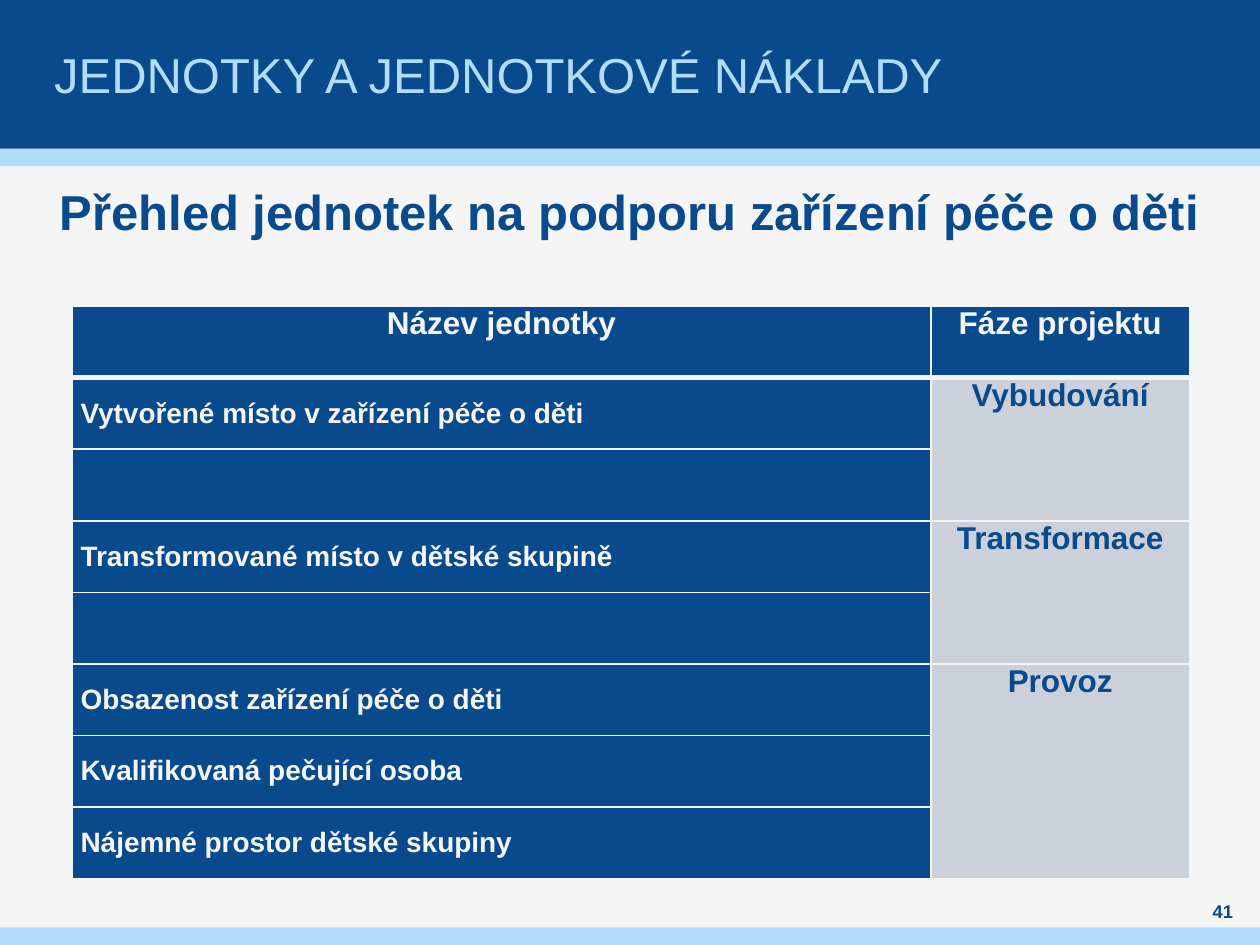
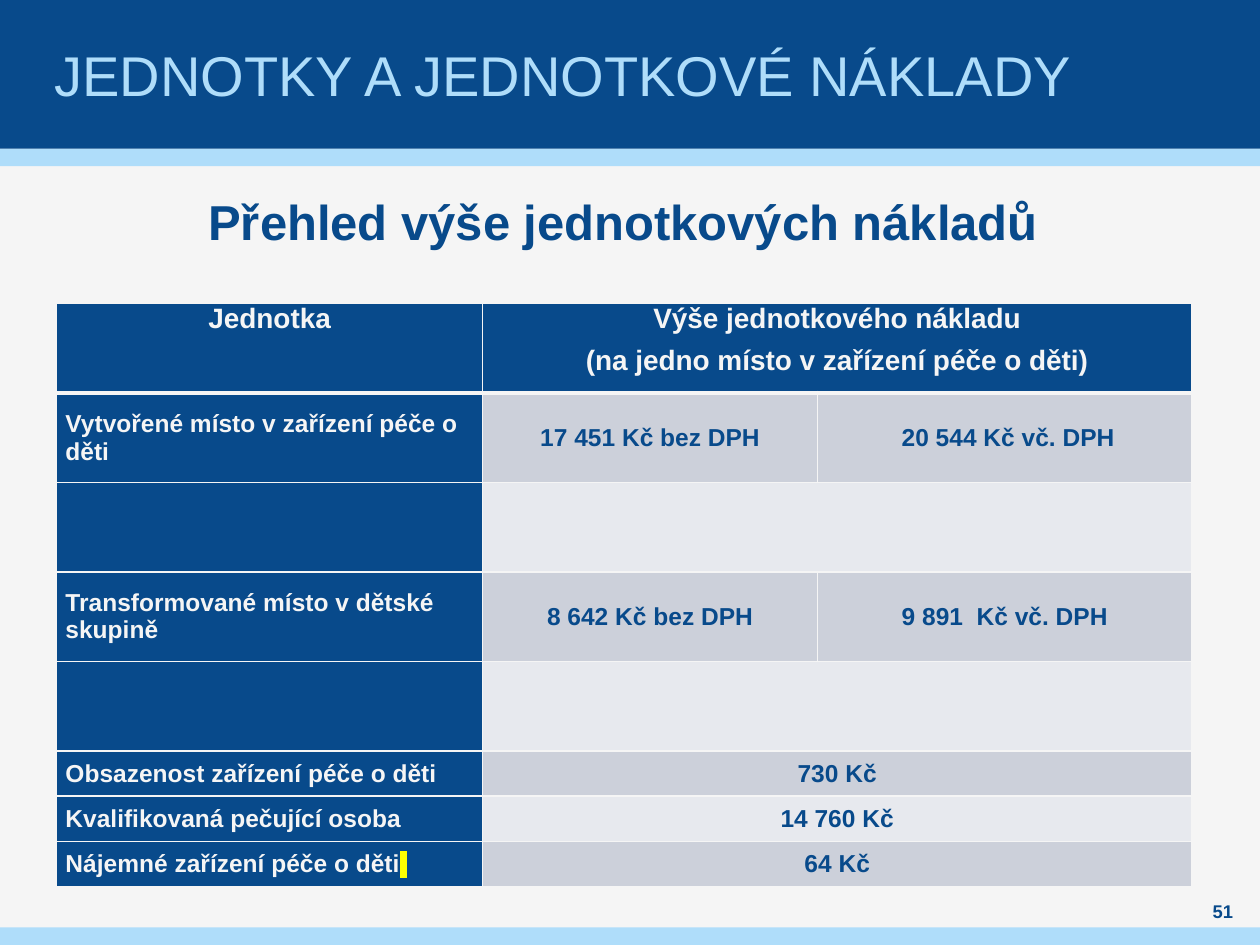
from lxml import etree
from pptx import Presentation
from pptx.dml.color import RGBColor as RGB
from pptx.enum.shapes import MSO_SHAPE as Shape
from pptx.enum.text import MSO_ANCHOR as Anchor, PP_ALIGN as Align
from pptx.oxml.ns import qn
from pptx.util import Inches, Pt

NAVY = RGB(0x08, 0x4A, 0x8B)
SKY = RGB(0xAF, 0xDD, 0xFA)
PAPER = RGB(0xF5, 0xF5, 0xF5)
GREY = RGB(0xCC, 0xD0, 0xDA)
PALE = RGB(0xE7, 0xE9, 0xEE)
YELLOW = RGB(0xFF, 0xFF, 0x00)
FONT = "Arial"
TITLE = "JEDNOTKY A JEDNOTKOVÉ NÁKLADY"


def paint(node, tag, color):
    fill = etree.SubElement(node, qn(tag))
    etree.SubElement(fill, qn("a:srgbClr"), val=str(color))
    return fill


def write(frame, text, size=28, color=NAVY, bold=True, align=Align.CENTER, gap=0, mark=None):
    for i, line in enumerate(text.split("\n")):
        para = frame.paragraphs[0] if i == 0 else frame.add_paragraph()
        para.alignment = align
        para.space_before = para.space_after = Pt(gap)
        for part in (line, mark):
            if not part:
                continue
            run = para.add_run()
            run.text = part
            font = run.font
            font.name, font.size, font.bold = FONT, Pt(size), bold
            font.color.rgb = color
            if part is mark:
                props = run._r.get_or_add_rPr()
                props.find(qn("a:solidFill")).addnext(paint(props, "a:highlight", YELLOW))


class Deck:
    def __init__(self):
        self.prs = Presentation()
        self.prs.slide_width, self.prs.slide_height = Inches(10), Inches(7.5)

    def page(self, number, size, head, box):
        self.slide = self.prs.slides.add_slide(self.prs.slide_layouts[6])
        back = self.slide.background.fill
        back.solid()
        back.fore_color.rgb = PAPER
        self.band(1.18, 0.14, SKY)
        self.band(0, 1.18, NAVY)
        self.band(7.36, 0.14, SKY)
        self.label((0.39, 0, 9.21, 1.18), TITLE, pad=(0.04, 0), anchor=Anchor.MIDDLE,
                   size=size, color=SKY, bold=False, align=Align.LEFT)
        self.label((9.45, 7.13, 0.51, 0.2), number, pad=(0, 0), anchor=Anchor.MIDDLE, size=10.5)
        self.label(box, head)

    def band(self, top, height, color):
        bar = self.slide.shapes.add_shape(Shape.RECTANGLE, 0, Inches(top), Inches(10), Inches(height))
        bar.shadow.inherit = False
        bar.fill.solid()
        bar.fill.fore_color.rgb = color
        bar.line.fill.background()

    def label(self, box, text, pad=(0.1, 0.05), anchor=Anchor.TOP, **style):
        frame = self.slide.shapes.add_textbox(*map(Inches, box)).text_frame
        frame.word_wrap = True
        frame.vertical_anchor = anchor
        frame.margin_left = frame.margin_right = Inches(pad[0])
        frame.margin_top = frame.margin_bottom = Inches(pad[1])
        write(frame, text, **style)

    def edge(self, cell, row):
        props = cell._tc.get_or_add_tcPr()
        for i, side in enumerate("LRTB"):
            thick = (row, side) in ((0, "B"), (1, "T"))
            line = etree.Element(qn(f"a:ln{side}"), w=str(Pt(3 if thick else 1)))
            paint(line, "a:solidFill", PAPER)
            props.insert(i, line)

    def table(self, left, top, cols, rows, cells, spans, sizes, anchor, marks=()):
        frame = self.slide.shapes.add_table(len(rows), len(cols), Inches(left), Inches(top),
                                            Inches(sum(cols)), Inches(sum(rows)))
        grid = frame.table
        for col, width in zip(grid.columns, cols):
            col.width = Inches(width)
        for row, height in zip(grid.rows, rows):
            row.height = Inches(height)
        for r, line in enumerate(cells):
            for c, text in enumerate(line):
                self.cell(grid.cell(r, c), r, c, text, sizes, anchor, " " if (r, c) in marks else None)
        for r, c, end, last in spans:
            grid.cell(r, c).merge(grid.cell(end, last))

    def cell(self, cell, r, c, text, sizes, anchor, mark):
        head, name, value = sizes
        dark = r == 0 or c == 0
        cell.fill.solid()
        cell.fill.fore_color.rgb = NAVY if dark else GREY if r % 2 else PALE
        self.edge(cell, r)
        cell.margin_left = cell.margin_right = Inches(0.07)
        cell.margin_top = cell.margin_bottom = 0
        cell.vertical_anchor = Anchor.TOP if r == 0 else Anchor.MIDDLE if c == 0 else anchor
        if text:
            write(cell.text_frame, text, size=head if r == 0 else name if c == 0 else value,
                  color=PAPER if dark else NAVY, gap=3, mark=mark,
                  align=Align.LEFT if r and c == 0 else Align.CENTER)


def main():
    deck = Deck()

    deck.page("41", 28, "Přehled jednotek na podporu zařízení péče o děti", (0.35, 1.39, 9.29, 0.57))
    units = [
        ("Název jednotky", "Fáze projektu"),
        ("Vytvořené místo v zařízení péče o děti", "Vybudování"),
        ("", ""),
        ("Transformované místo v dětské skupině", "Transformace"),
        ("", ""),
        ("Obsazenost zařízení péče o děti", "Provoz"),
        ("Kvalifikovaná pečující osoba", ""),
        ("Nájemné prostor dětské skupiny", ""),
    ]
    phases = [(1, 1, 2, 1), (3, 1, 4, 1), (5, 1, 7, 1)]
    deck.table(0.57, 2.43, [6.82, 2.05], [0.568] * 8, units, phases, (18, 16, 18), Anchor.TOP)

    deck.page("51", 32, "Přehled výše jednotkových nákladů", (0.89, 1.47, 8.11, 0.57))
    costs = [
        ("Jednotka", "Výše jednotkového nákladu\n(na jedno místo v zařízení péče o děti)", ""),
        ("Vytvořené místo v zařízení péče o děti", "17 451 Kč bez DPH", " 20 544 Kč vč. DPH"),
        ("", "", ""),
        ("Transformované místo v dětské skupině", "8 642 Kč bez DPH", "9 891  Kč vč. DPH"),
        ("", "", ""),
        ("Obsazenost zařízení péče o děti", "730 Kč", ""),
        ("Kvalifikovaná pečující osoba", "14 760 Kč", ""),
        ("Nájemné zařízení péče o děti", "64 Kč", ""),
    ]
    wide = [(r, 1, r, 2) for r, line in enumerate(costs) if not line[2]]
    deck.table(0.45, 2.41, [3.38, 2.66, 2.97], [0.71] * 5 + [0.36] * 3, costs, wide,
               (16, 14, 14), Anchor.MIDDLE, marks=[(7, 0)])

    deck.prs.save("out.pptx")


if __name__ == "__main__":
    main()
